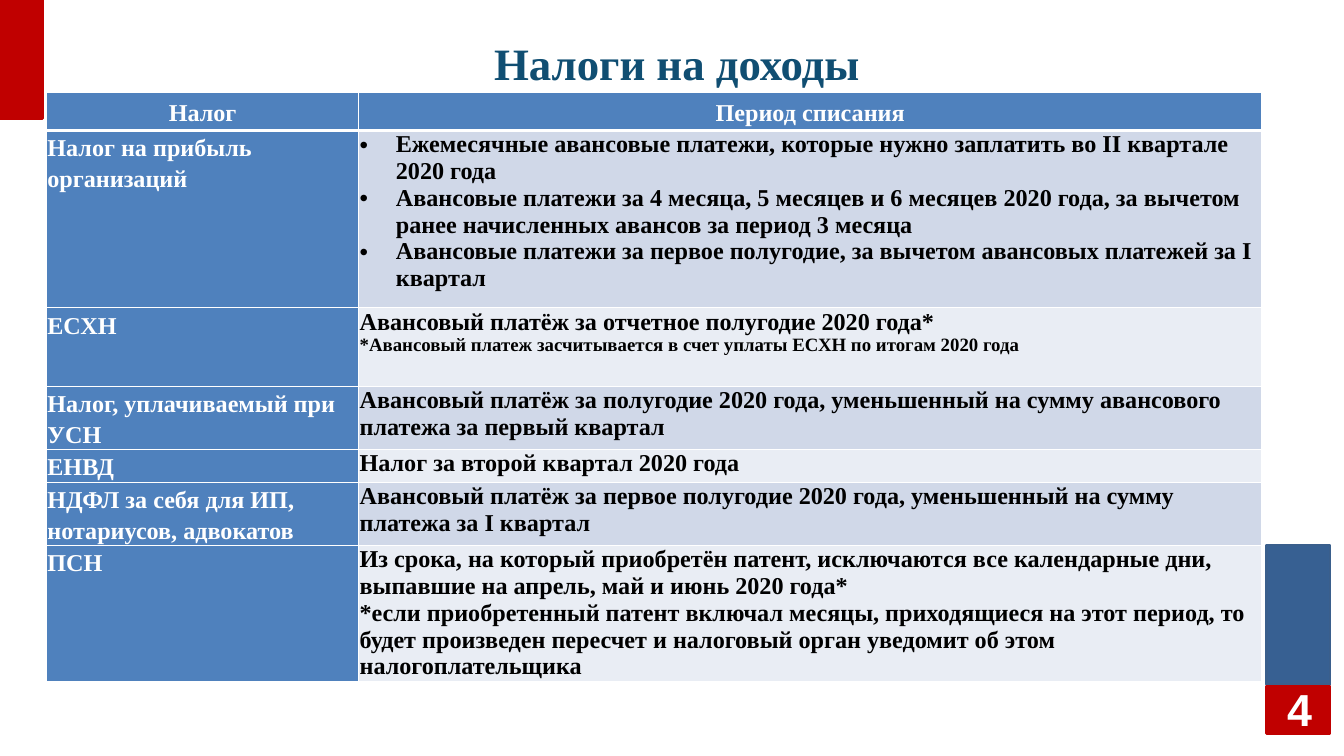
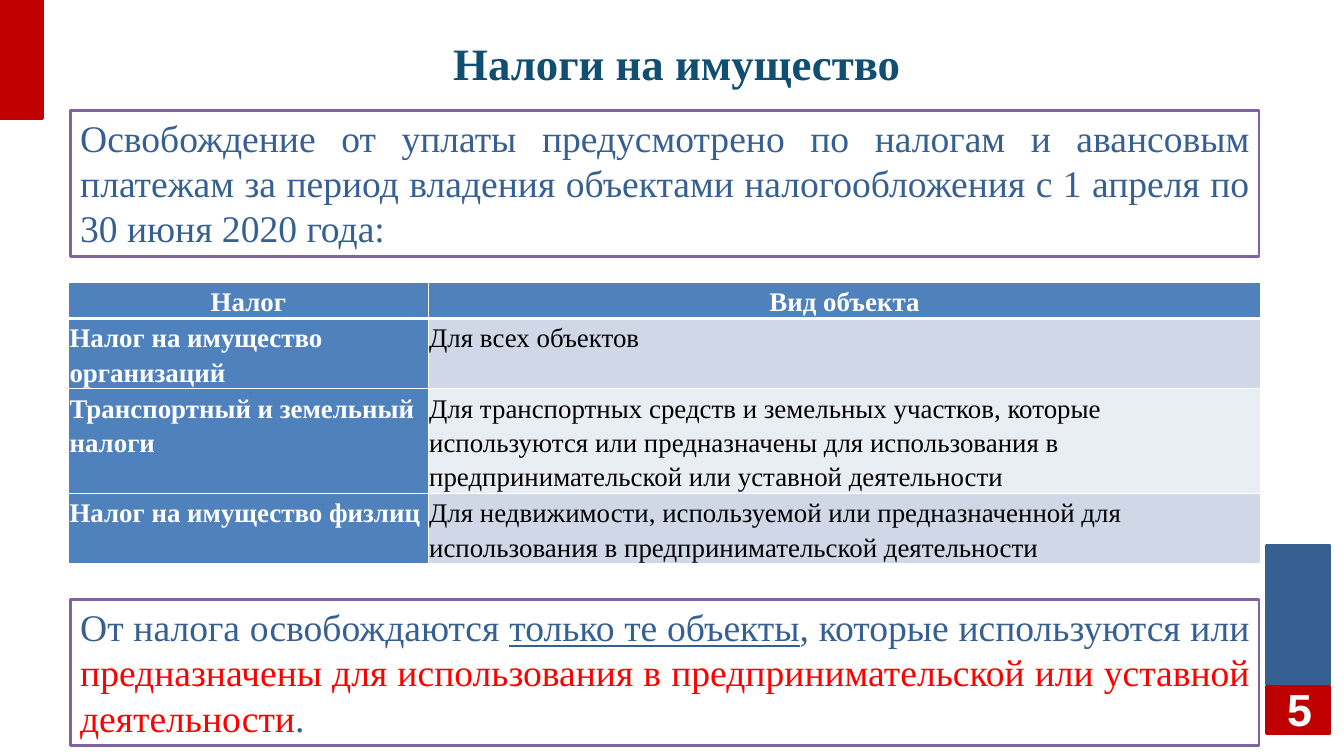
from dataclasses import dataclass

from lxml.etree import SubElement
from pptx import Presentation
from pptx.dml.color import RGBColor
from pptx.enum.shapes import MSO_SHAPE as Shape
from pptx.enum.text import MSO_ANCHOR as Anchor
from pptx.enum.text import MSO_AUTO_SIZE as AutoSize
from pptx.enum.text import PP_ALIGN as Align
from pptx.oxml.ns import qn
from pptx.util import Pt

SERIF = "Times New Roman"
WHITE, BLACK, RED = "FFFFFF", "000000", "C00000"
NAVY, TITLE, ACCENT = "376092", "104E72", "4F81BD"
BANDS = ("D0D8E8", "E9EDF4")
INDENT = 27


@dataclass(frozen=True)
class Block:
    left: float
    top: float
    width: float
    height: float
    fill: str
    line: str


@dataclass(frozen=True)
class Part:
    text: str
    color: str = NAVY
    underline: bool = False


@dataclass(frozen=True)
class Line:
    text: str
    size: float = 18
    bullet: bool = False


@dataclass(frozen=True)
class Row:
    height: float
    label: str
    lines: tuple[Line, ...]


@dataclass(frozen=True)
class Grid:
    left: float
    top: float
    widths: tuple[float, float]
    header_height: float
    headers: tuple[str, str]
    rows: tuple[Row, ...]
    size: float
    body_bold: bool
    body_spacing: float


FRAME = (
    Block(943, 406, 47.5, 103.7, NAVY, "3A5F8C"),
    Block(943, 511, 47.5, 35.5, RED, RED),
    Block(0, 0, 31.7, 88.5, RED, RED),
)

INCOME = Grid(
    34.6, 69.1, (232.5, 672.5), 28, ("Налог", "Период списания"),
    (
        Row(132, "Налог на прибыль организаций", (
            Line("Ежемесячные авансовые платежи, которые нужно заплатить во II квартале 2020 года", bullet=True),
            Line("Авансовые платежи за 4 месяца, 5 месяцев и 6 месяцев 2020 года, "
                 "за вычетом ранее начисленных авансов за период 3 месяца", bullet=True),
            Line("Авансовые платежи за первое полугодие, за вычетом авансовых платежей за I квартал", bullet=True),
        )),
        Row(58.5, "ЕСХН", (
            Line("Авансовый платёж за отчетное полугодие 2020 года*"),
            Line("*Авансовый платеж засчитывается в счет уплаты ЕСХН по итогам 2020 года", 14),
        )),
        Row(45.5, "Налог, уплачиваемый при УСН", (
            Line("Авансовый платёж за полугодие 2020 года, уменьшенный на сумму "
                 "авансового платежа за первый квартал"),
        )),
        Row(24, "ЕНВД", (Line("Налог за второй квартал 2020 года"),)),
        Row(45.5, "НДФЛ за себя для ИП, нотариусов, адвокатов", (
            Line("Авансовый платёж за первое полугодие 2020 года, уменьшенный на сумму платежа за I квартал"),
        )),
        Row(101.5, "ПСН", (
            Line("Из срока, на который приобретён патент, исключаются все календарные дни, "
                 "выпавшие на апрель, май и июнь 2020 года*"),
            Line("*если приобретенный патент включал месяцы, приходящиеся на этот период, "
                 "то будет произведен пересчет и налоговый орган уведомит об этом налогоплательщика"),
        )),
    ),
    18, True, 1,
)

PROPERTY = Grid(
    51.1, 210.2, (267.8, 620), 27, ("Налог", "Вид объекта"),
    (
        Row(52, "Налог на имущество организаций", (Line("Для всех объектов", 20),)),
        Row(78, "Транспортный и земельный налоги", (
            Line("Для транспортных средств и земельных участков, которые используются или "
                 "предназначены для использования в предпринимательской или уставной деятельности", 20),
        )),
        Row(52, "Налог на имущество физлиц", (
            Line("Для недвижимости, используемой или предназначенной для использования "
                 "в предпринимательской деятельности", 20),
        )),
    ),
    20, False, 1.15,
)

EXEMPTION = (
    Part("Освобождение от уплаты предусмотрено по налогам и авансовым платежам "
         "за период владения объектами налогообложения с 1 апреля по 30 июня 2020 года:"),
)
CONDITION = (
    Part("От налога освобождаются "),
    Part("только те объекты", underline=True),
    Part(", которые используются или "),
    Part("предназначены для использования в предпринимательской или уставной деятельности", "FF0000"),
    Part("."),
)


def rgb(value: str) -> RGBColor:
    return RGBColor.from_string(value)


def style(p, size: float, color: str, bold: bool = False, font: str = SERIF) -> None:
    for r in p.runs:
        r.font.name = font
        r.font.size = Pt(size)
        r.font.bold = bold
        r.font.color.rgb = rgb(color)


def add_block(slide, block: Block):
    s = slide.shapes.add_shape(
        Shape.RECTANGLE, Pt(block.left), Pt(block.top), Pt(block.width), Pt(block.height))
    s.shadow.inherit = False
    s.fill.solid()
    s.fill.fore_color.rgb = rgb(block.fill)
    s.line.color.rgb = rgb(block.line)
    s.line.width = Pt(2)
    return s


def add_frame(slide, layout) -> None:
    for block in FRAME:
        layout.shapes._spTree.append(add_block(slide, block)._element)


def set_heading(s, text: str, color: str, font: str) -> None:
    tf = s.text_frame
    tf.text = text
    tf.word_wrap = True
    tf.auto_size = AutoSize.NONE
    tf.vertical_anchor = Anchor.MIDDLE
    tf.margin_left = tf.margin_right = 0
    tf.margin_top = tf.margin_bottom = Pt(3.6)
    p = tf.paragraphs[0]
    p.alignment = Align.CENTER
    style(p, 33.4, color, True, font)


def add_slide(prs, layout, title: str, number: int):
    slide = prs.slides.add_slide(layout)
    s = slide.shapes.title
    s.left, s.top, s.width, s.height = Pt(62.6), Pt(9.4), Pt(882.7), Pt(75)
    set_heading(s, title, TITLE, SERIF)
    s = slide.shapes.add_textbox(Pt(941.8), Pt(512.6), Pt(51.8), Pt(30.2))
    set_heading(s, str(number), WHITE, "Arial")
    return slide


def add_borders(cell, top: float, bottom: float) -> None:
    tc_pr = cell._tc.get_or_add_tcPr()
    for tag, width in (("lnL", 1), ("lnR", 1), ("lnT", top), ("lnB", bottom)):
        ln = SubElement(tc_pr, qn(f"a:{tag}"), w=str(Pt(width)))
        fill = SubElement(ln, qn("a:solidFill"))
        SubElement(fill, qn("a:srgbClr"), val=WHITE)


def add_bullet(p) -> None:
    p_pr = p._p.get_or_add_pPr()
    p_pr.set("marL", str(Pt(INDENT)))
    p_pr.set("indent", str(Pt(-INDENT)))
    SubElement(p_pr, qn("a:buFont"), typeface="Arial")
    SubElement(p_pr, qn("a:buChar"), char="•")


def fill_cell(cell, lines: tuple[Line, ...], fill: str, color: str, bold: bool,
              spacing: float, align: Align = Align.LEFT) -> None:
    cell.margin_left = cell.margin_right = cell.margin_top = cell.margin_bottom = Pt(0.7)
    cell.fill.solid()
    cell.fill.fore_color.rgb = rgb(fill)
    tf = cell.text_frame
    tf.text = "\n".join(line.text for line in lines)
    for p, line in zip(tf.paragraphs, lines):
        if line.bullet:
            add_bullet(p)
        p.alignment = align
        p.line_spacing = float(spacing)
        style(p, line.size, color, bold)


def add_grid(slide, grid: Grid) -> None:
    heights = [grid.header_height, *(row.height for row in grid.rows)]
    table = slide.shapes.add_table(
        len(heights), len(grid.widths), Pt(grid.left), Pt(grid.top),
        Pt(sum(grid.widths)), Pt(sum(heights))).table
    for column, width in zip(table.columns, grid.widths):
        column.width = Pt(width)
    for i, height in enumerate(heights):
        table.rows[i].height = Pt(height)
        for cell in table.rows[i].cells:
            add_borders(cell, 3 if i == 1 else 1, 3 if i == 0 else 1)
    for cell, text in zip(table.rows[0].cells, grid.headers):
        fill_cell(cell, (Line(text, grid.size),), ACCENT, WHITE, True, 1.15, Align.CENTER)
        cell.vertical_anchor = Anchor.MIDDLE
    for i, row in enumerate(grid.rows):
        label, body = table.rows[i + 1].cells
        fill_cell(label, (Line(row.label, grid.size),), ACCENT, WHITE, True, 1.15)
        fill_cell(body, row.lines, BANDS[i % 2], BLACK, grid.body_bold, grid.body_spacing)


def add_note(slide, top: float, parts: tuple[Part, ...]) -> None:
    s = add_block(slide, Block(52.6, top, 884.9, 108.7, WHITE, "8064A2"))
    tf = s.text_frame
    tf.word_wrap = True
    tf.auto_size = AutoSize.SHAPE_TO_FIT_TEXT
    tf.vertical_anchor = Anchor.TOP
    p = tf.paragraphs[0]
    p.alignment = Align.JUSTIFY
    for part in parts:
        r = p.add_run()
        r.text = part.text
    style(p, 28, NAVY)
    for r, part in zip(p.runs, parts):
        r.font.color.rgb = rgb(part.color)
        r.font.underline = part.underline


def main() -> None:
    prs = Presentation()
    prs.slide_width, prs.slide_height = Pt(1000.8), Pt(563.04)
    layout = prs.slide_layouts[5]

    income = add_slide(prs, layout, "Налоги на доходы", 4)
    add_frame(income, layout)
    add_grid(income, INCOME)

    estate = add_slide(prs, layout, "Налоги на имущество", 5)
    add_grid(estate, PROPERTY)
    add_note(estate, 82.1, EXEMPTION)
    add_note(estate, 446.4, CONDITION)

    prs.save("out.pptx")


if __name__ == "__main__":
    main()
